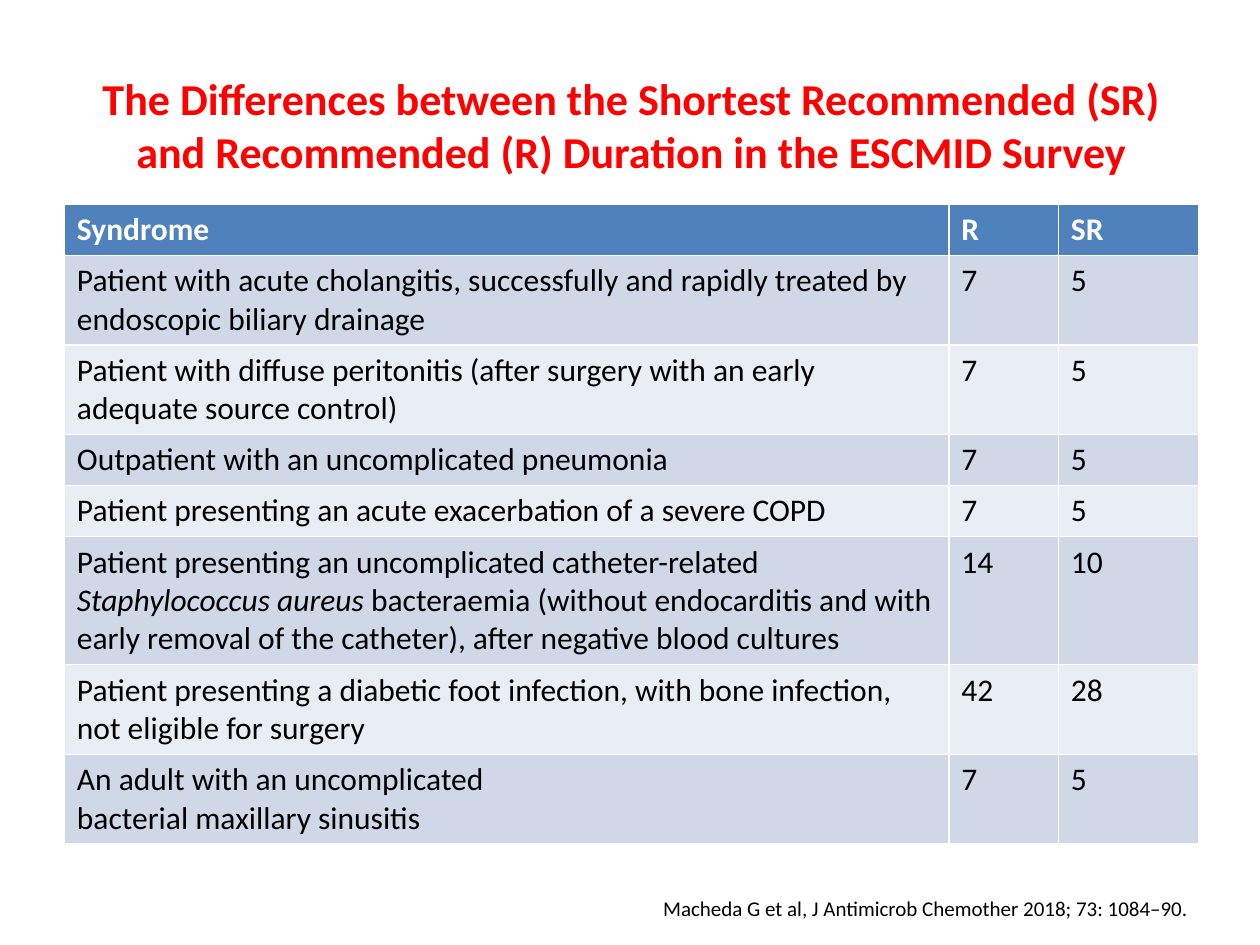
from pptx import Presentation
from pptx.dml.color import RGBColor
from pptx.enum.text import MSO_ANCHOR, MSO_AUTO_SIZE, PP_ALIGN
from pptx.util import Pt

CENTER, RIGHT = PP_ALIGN.CENTER, PP_ALIGN.RIGHT
MIDDLE = MSO_ANCHOR.MIDDLE
NO_FIT = MSO_AUTO_SIZE.NONE

RED = RGBColor(0xFF, 0x00, 0x00)
WHITE = RGBColor(0xFF, 0xFF, 0xFF)
BLACK = RGBColor(0x00, 0x00, 0x00)
HEADER_BLUE = RGBColor(0x4F, 0x81, 0xBD)
BANDS = (RGBColor(0xE9, 0xED, 0xF4), RGBColor(0xD0, 0xD8, 0xE8))
FONT = "Calibri"

# Content: a newline starts a paragraph, asterisks enclose italics
TITLE = ("The Differences between the Shortest Recommended (SR) "
         "and Recommended (R) Duration in the ESCMID Survey")
ROWS = [
    ("Syndrome", "R", "SR"),
    ("Patient with acute cholangitis, successfully and rapidly treated by "
     "endoscopic biliary drainage", "7", "5"),
    ("Patient with diffuse peritonitis (after surgery with an early "
     "adequate source control)", "7", "5"),
    ("Outpatient with an uncomplicated pneumonia", "7", "5"),
    ("Patient presenting an acute exacerbation of a severe COPD", "7", "5"),
    ("Patient presenting an uncomplicated catheter-related "
     "*Staphylococcus aureus *bacteraemia (without endocarditis and with "
     "early removal of the catheter), after negative blood cultures", "14", "10"),
    ("Patient presenting a diabetic foot infection, with bone infection, "
     "not eligible for surgery", "42", "28"),
    ("An adult with an uncomplicated\nbacterial maxillary sinusitis", "7", "5"),
]
CITATION = "Macheda G et al, J Antimicrob Chemother 2018; 73: 1084–90."

# Layout in points
LEFT, WIDTH = 36.8, 648
COLUMN_WIDTHS = (505.4, 62.6, 80)
ROW_HEIGHT = 29.2


def style(p, size, color, bold=False, align=None):
    p.font.name, p.font.size = FONT, Pt(size)
    p.font.bold, p.font.color.rgb = bold, color
    if align is not None:
        p.alignment = align


def fill_cell(cell, text, fill, color, bold):
    cell.fill.solid()
    cell.fill.fore_color.rgb = fill
    tf = cell.text_frame
    for i, line in enumerate(text.split("\n")):
        p = tf.add_paragraph() if i else tf.paragraphs[0]
        style(p, 18, color, bold)
        for j, part in enumerate(line.split("*")):
            r = p.add_run()
            r.text = part
            if j % 2:
                r.font.italic = True


prs = Presentation()
prs.slide_width, prs.slide_height = Pt(720), Pt(540)
s = prs.slides.add_slide(prs.slide_layouts[5])

# Title
sp = s.shapes.title
sp.left, sp.top, sp.width, sp.height = Pt(LEFT), Pt(26), Pt(WIDTH), Pt(90)
tf = sp.text_frame
tf.text = TITLE
tf.word_wrap, tf.auto_size, tf.vertical_anchor = True, NO_FIT, MIDDLE
style(tf.paragraphs[0], 25.2, RED, True, CENTER)

# Duration table
table = s.shapes.add_table(len(ROWS), len(COLUMN_WIDTHS), Pt(LEFT), Pt(116.8),
                           Pt(WIDTH), Pt(ROW_HEIGHT * len(ROWS))).table
for column, width in zip(table.columns, COLUMN_WIDTHS):
    column.width = Pt(width)
for i, row in enumerate(ROWS):
    table.rows[i].height = Pt(ROW_HEIGHT)
    header = i == 0
    fill = HEADER_BLUE if header else BANDS[i % 2]
    for j, text in enumerate(row):
        fill_cell(table.cell(i, j), text, fill, WHITE if header else BLACK, header)

# Citation
sp = s.shapes.add_textbox(Pt(326), Pt(508.4), Pt(360), Pt(21.8))
tf = sp.text_frame
tf.word_wrap = True
tf.text = CITATION
style(tf.paragraphs[0], 12, BLACK, align=RIGHT)

prs.save("out.pptx")
